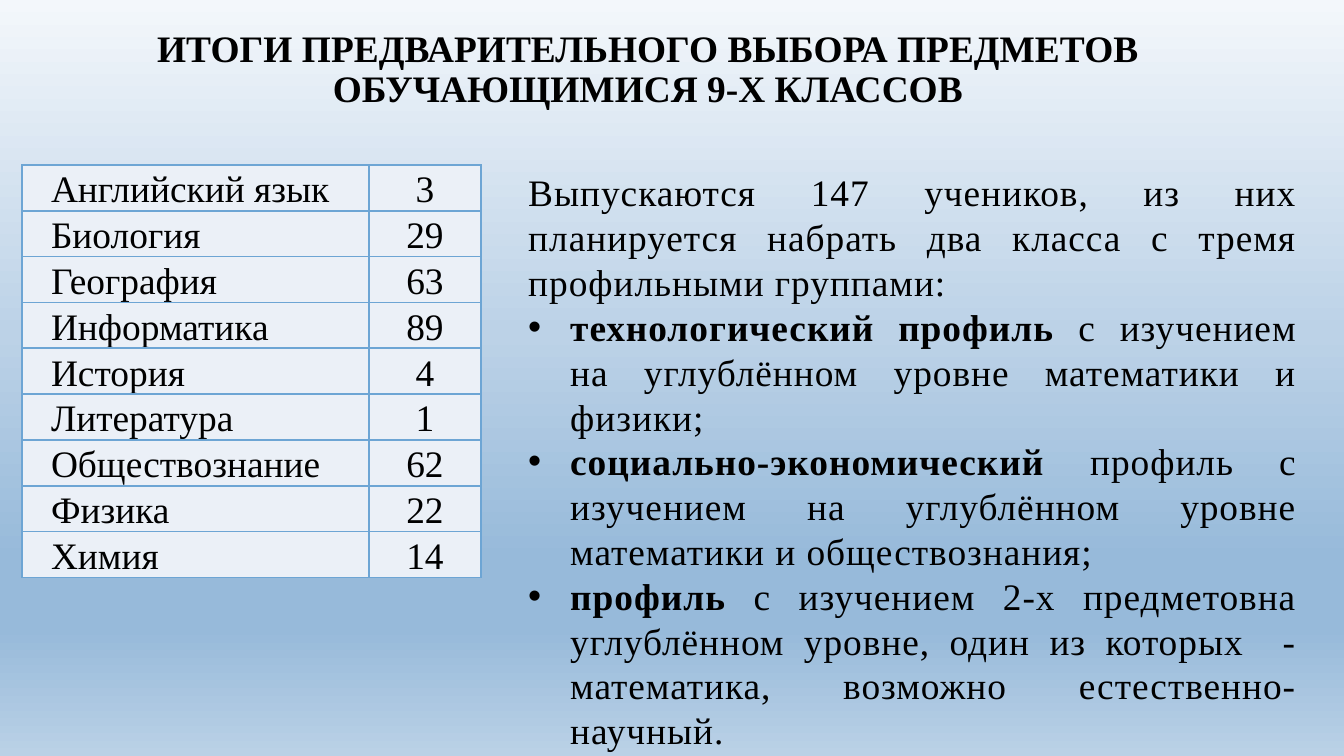
import pptx
import pptx.dml.color
import pptx.enum.text
import pptx.oxml
import pptx.oxml.ns
import pptx.util
from lxml import etree

TITLE = "ИТОГИ ПРЕДВАРИТЕЛЬНОГО ВЫБОРА ПРЕДМЕТОВ ОБУЧАЮЩИМИСЯ 9-Х КЛАССОВ"
SUBJECTS = [
    ("Английский язык", 3),
    ("Биология", 29),
    ("География", 63),
    ("Информатика", 89),
    ("История", 4),
    ("Литература", 1),
    ("Обществознание", 62),
    ("Физика", 22),
    ("Химия", 14),
]
INTRO = "Выпускаются 147 учеников, из них планируется набрать два класса с тремя профильными группами:"
PROFILES = [
    ("технологический профиль", " с изучением на углублённом уровне математики и физики;"),
    ("социально-экономический", " профиль с изучением на углублённом уровне математики и обществознания;"),
    ("профиль", " с изучением 2-х предметовна углублённом уровне, один из которых  - "
     "математика, возможно естественно-научный."),
]
BACKGROUND = [(0, "F3F7FB"), (44, "BCD2E7"), (74, "97BADA"), (83, "97BADA"), (100, "BAD1E6")]
FONT = "Times New Roman"
BORDER = "6DA5D4"
CELL_FILL = "EBF0F7"
COLUMN_WIDTHS = (347, 112)
ROW_HEIGHT = 42
BULLET_INDENT = 42
ALIGN = pptx.enum.text.PP_ALIGN
ANCHOR = pptx.enum.text.MSO_ANCHOR


def px(length):
    return pptx.util.Emu(round(length * 914400 / 134.4))


def color(value):
    return pptx.dml.color.RGBColor.from_string(value)


def add_child(parent, tag, **attributes):
    child = etree.SubElement(parent, pptx.oxml.ns.qn(tag))
    for name, value in attributes.items():
        child.set(name, str(value))
    return child


def write(paragraph, text, bold=False, align=ALIGN.LEFT, spacing=None):
    paragraph.alignment = align
    run = paragraph.add_run()
    run.text = text
    run.font.name = FONT
    run.font.size = pptx.util.Pt(20)
    run.font.bold = bold
    run.font.color.rgb = color("000000")
    if spacing:
        run.font._element.set("spc", str(spacing))


def add_text_box(slide, left, top, width, height, anchor=ANCHOR.TOP):
    frame = slide.shapes.add_textbox(px(left), px(top), px(width), px(height)).text_frame
    frame.word_wrap = True
    frame.vertical_anchor = anchor
    return frame


def paint_background(slide):
    fill = slide.background.fill
    fill.gradient()
    gradient = slide.background._cSld.find(".//" + pptx.oxml.ns.qn("a:gradFill"))
    for child in list(gradient):
        gradient.remove(child)
    stops = add_child(gradient, "a:gsLst")
    for position, value in BACKGROUND:
        add_child(add_child(stops, "a:gs", pos=position * 1000), "a:srgbClr", val=value)
    add_child(gradient, "a:lin", ang=90 * 60000, scaled=0)


def format_cell(cell, left_margin):
    cell.vertical_anchor = ANCHOR.BOTTOM
    cell.margin_left = px(left_margin)
    cell.margin_right = cell.margin_top = px(1)
    cell.margin_bottom = 0
    properties = cell._tc.get_or_add_tcPr()
    for side in ("a:lnL", "a:lnR", "a:lnT", "a:lnB"):
        line = add_child(properties, side, w=12700)
        add_child(add_child(line, "a:solidFill"), "a:srgbClr", val=BORDER)
    cell.fill.solid()
    cell.fill.fore_color.rgb = color(CELL_FILL)


def add_subject_table(slide):
    table = slide.shapes.add_table(
        len(SUBJECTS), 2, px(22), px(165), px(sum(COLUMN_WIDTHS)), px(ROW_HEIGHT * len(SUBJECTS))
    ).table
    table.first_row = table.horz_banding = False
    for column, width in zip(table.columns, COLUMN_WIDTHS):
        column.width = px(width)
    for index, (subject, count) in enumerate(SUBJECTS):
        table.rows[index].height = px(ROW_HEIGHT)
        name_cell, count_cell = table.rows[index].cells
        format_cell(name_cell, 29)
        format_cell(count_cell, 1)
        write(name_cell.text_frame.paragraphs[0], subject)
        write(count_cell.text_frame.paragraphs[0], str(count), align=ALIGN.CENTER)


def add_profiles(slide):
    frame = add_text_box(slide, 515, 163, 795, 602)
    write(frame.paragraphs[0], INTRO, align=ALIGN.JUSTIFY, spacing=50)
    for name, description in PROFILES:
        paragraph = frame.add_paragraph()
        properties = paragraph._p.get_or_add_pPr()
        properties.set("marL", str(px(BULLET_INDENT)))
        properties.set("indent", str(-px(BULLET_INDENT)))
        add_child(properties, "a:buFont", typeface="Arial")
        add_child(properties, "a:buChar", char="•")
        write(paragraph, name, bold=True, align=ALIGN.JUSTIFY, spacing=50)
        write(paragraph, description, align=ALIGN.JUSTIFY, spacing=50)


presentation = pptx.Presentation()
presentation.slide_width = px(1344)
presentation.slide_height = px(756)
slide = presentation.slides.add_slide(presentation.slide_layouts[6])
paint_background(slide)

title = add_text_box(slide, 75, 20, 1146, 101, anchor=ANCHOR.MIDDLE).paragraphs[0]
title.line_spacing = 0.9
write(title, TITLE, bold=True, align=ALIGN.CENTER)

add_subject_table(slide)
add_profiles(slide)
presentation.save("out.pptx")
